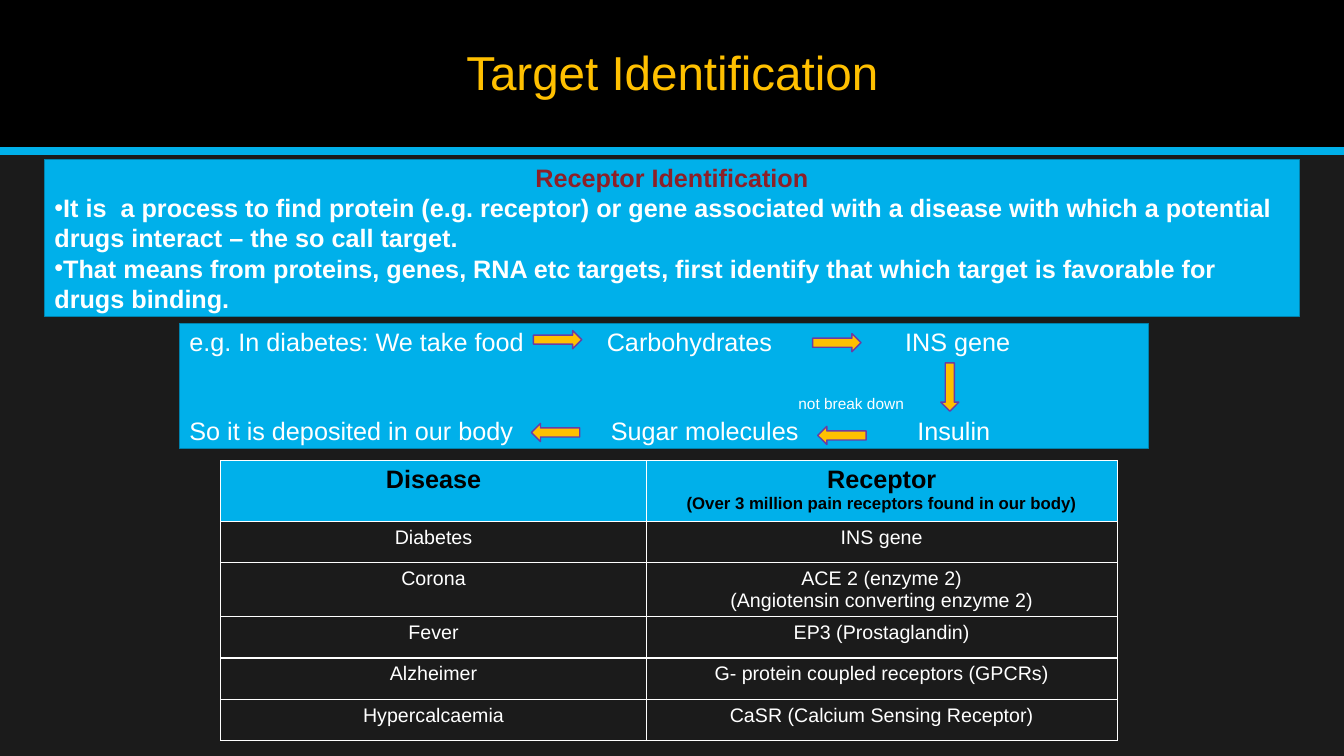
from lxml.etree import SubElement
from pptx import Presentation
from pptx.dml.color import RGBColor
from pptx.enum.shapes import MSO_CONNECTOR, MSO_SHAPE
from pptx.enum.text import MSO_ANCHOR, MSO_AUTO_SIZE, PP_ALIGN
from pptx.oxml.ns import qn
from pptx.util import Inches, Pt

BLACK = RGBColor(0x00, 0x00, 0x00)
WHITE = RGBColor(0xFF, 0xFF, 0xFF)
CHARCOAL = RGBColor(0x1B, 0x1B, 0x1B)
SKY = RGBColor(0x00, 0xB0, 0xEA)
DEEP_SKY = RGBColor(0x00, 0x82, 0xAD)
GOLD = RGBColor(0xFF, 0xC0, 0x00)
MAROON = RGBColor(0x8C, 0x20, 0x28)
PURPLE = RGBColor(0x6C, 0x3C, 0xA2)

PROCESS_POINTS = [
    "It is  a process to find protein (e.g. receptor) or gene associated with a disease "
    "with which a potential drugs interact – the so call target.",
    "That means from proteins, genes, RNA etc targets, first identify that which target "
    "is favorable for drugs binding.",
]
FLOW_LINES = [
    ("e.g. In diabetes: We take food\tCarbohydrates\tINS gene", 18, (4.14, 7.1), 0, 0),
    ("\tnot break down", 11, (6.04,), 27, 2),
    ("So it is deposited in our body\tSugar molecules\tInsulin", 18, (4.18, 7.22), 0, 0),
]
FLOW_ARROWS = [
    (3.51, 0.07, 0),
    (6.28, 0.1, 0),
    (3.49, 0.99, 180),
    (6.33, 1.02, 180),
    (7.4, 0.54, 90),
]
RECEPTORS = [
    ("Disease", "Receptor\n(Over 3 million pain receptors found in our body)"),
    ("Diabetes", "INS gene"),
    ("Corona", "ACE 2 (enzyme 2)\n(Angiotensin converting enzyme 2)"),
    ("Fever", "EP3 (Prostaglandin)"),
    ("Alzheimer", "G- protein coupled receptors (GPCRs)"),
    ("Hypercalcaemia", "CaSR (Calcium Sensing Receptor)"),
]


def place(part, left, top, width, height):
    part.left, part.top = Inches(left), Inches(top)
    part.width, part.height = Inches(width), Inches(height)


def style_runs(paragraph, size, color, bold=False):
    for run in paragraph.runs:
        run.font.name = "Arial"
        run.font.size = Pt(size)
        run.font.bold = bold
        run.font.color.rgb = color


def paint(part, fill, outline):
    part.fill.solid()
    part.fill.fore_color.rgb = fill
    part.line.color.rgb = outline
    part.line.width = Pt(1)


def add_panel(slide, preset, left, top, width, height, fill, outline):
    panel = slide.shapes.add_shape(
        preset, Inches(left), Inches(top), Inches(width), Inches(height))
    panel.shadow.inherit = False
    paint(panel, fill, outline)
    return panel


def set_bullet(paragraph, bullet=None):
    properties = paragraph._p.get_or_add_pPr()
    properties.set("marL", "0")
    properties.set("indent", "0")
    if bullet:
        SubElement(properties, qn("a:buChar"), char=bullet)
    else:
        SubElement(properties, qn("a:buNone"))


def set_tabs(paragraph, stops):
    tabs = SubElement(paragraph._p.get_or_add_pPr(), qn("a:tabLst"))
    for stop in stops:
        SubElement(tabs, qn("a:tab"), pos=str(Inches(stop)), algn="l")


def set_borders(cell, color):
    properties = cell._tc.get_or_add_tcPr()
    for position, side in enumerate(("a:lnL", "a:lnR", "a:lnT", "a:lnB")):
        border = properties.makeelement(qn(side), {"w": str(Pt(1))})
        SubElement(SubElement(border, qn("a:solidFill")), qn("a:srgbClr"), val=str(color))
        properties.insert(position, border)


def add_header(slide, left, top, width, height):
    add_panel(slide, MSO_SHAPE.RECTANGLE, left, top, width, height,
              BLACK, BLACK).line.fill.background()
    rule = slide.shapes.add_connector(
        MSO_CONNECTOR.STRAIGHT, Inches(left), Inches(top + height),
        Inches(left + width), Inches(top + height))
    rule.line.color.rgb = SKY
    rule.line.width = Pt(6)
    SubElement(rule._element.spPr, qn("a:effectLst"))

    title = slide.shapes.title
    slide.shapes._spTree.append(title._element)
    place(title, left + 1.17, top + 0.14, 11, height - 0.3)
    frame = title.text_frame
    frame.text = "Target Identification"
    frame.vertical_anchor = MSO_ANCHOR.MIDDLE
    frame.auto_size = MSO_AUTO_SIZE.NONE
    heading = frame.paragraphs[0]
    heading.alignment = PP_ALIGN.CENTER
    heading.line_spacing = 0.9
    style_runs(heading, 34, GOLD)


def fill_definition(slide, left, top, width, height):
    definition = slide.placeholders[1]
    place(definition, left, top, width, height)
    paint(definition, SKY, DEEP_SKY)
    frame = definition.text_frame
    frame.text = "\n".join(["Receptor Identification", *PROCESS_POINTS])
    frame.word_wrap = True
    frame.vertical_anchor = MSO_ANCHOR.MIDDLE
    frame.auto_size = MSO_AUTO_SIZE.NONE
    heading, *points = frame.paragraphs
    for paragraph in frame.paragraphs:
        paragraph.space_before = Pt(0)
    heading.alignment = PP_ALIGN.CENTER
    set_bullet(heading)
    style_runs(heading, 18, MAROON, bold=True)
    for point in points:
        point.alignment = PP_ALIGN.LEFT
        set_bullet(point, "•")
        style_runs(point, 18, WHITE, bold=True)


def add_flow(slide, left, top, width, height):
    flow = add_panel(slide, MSO_SHAPE.RECTANGLE, left, top, width, height, SKY, DEEP_SKY)
    frame = flow.text_frame
    frame.text = "\n".join(line[0] for line in FLOW_LINES)
    frame.vertical_anchor = MSO_ANCHOR.MIDDLE
    for paragraph, (_, size, stops, before, after) in zip(frame.paragraphs, FLOW_LINES):
        paragraph.alignment = PP_ALIGN.LEFT
        paragraph.space_before, paragraph.space_after = Pt(before), Pt(after)
        set_tabs(paragraph, stops)
        style_runs(paragraph, size, WHITE)
    for across, down, angle in FLOW_ARROWS:
        arrow = add_panel(slide, MSO_SHAPE.RIGHT_ARROW, left + across, top + down,
                          0.48, 0.18, GOLD, PURPLE)
        arrow.rotation = angle


def add_receptor_table(slide, left, top, width, height):
    table = slide.shapes.add_table(
        len(RECEPTORS), 2, Inches(left), Inches(top), Inches(width), Inches(height)).table
    table.horz_banding = False
    table.columns[0].width = Inches(4.22)
    table.columns[1].width = Inches(width - 4.22)
    for index, texts in enumerate(RECEPTORS):
        is_header = index == 0
        table.rows[index].height = Inches(0.6 if is_header else 0.41)
        for cell, text in zip(table.rows[index].cells, texts):
            cell.text_frame.text = text
            if is_header:
                cell.fill.solid()
                cell.fill.fore_color.rgb = SKY
            else:
                cell.fill.background()
            set_borders(cell, WHITE)
            for line, paragraph in enumerate(cell.text_frame.paragraphs):
                paragraph.alignment = PP_ALIGN.CENTER
                if is_header:
                    style_runs(paragraph, 12 if line else 18, BLACK, bold=True)
                else:
                    style_runs(paragraph, 14, WHITE)


def main():
    deck = Presentation()
    deck.slide_width, deck.slide_height = Inches(13.33), Inches(7.5)
    slide = deck.slides.add_slide(deck.slide_layouts[1])
    slide.background.fill.solid()
    slide.background.fill.fore_color.rgb = CHARCOAL
    add_header(slide, 0, 0, 13.33, 1.5)
    fill_definition(slide, 0.44, 1.58, 12.45, 1.56)
    add_flow(slide, 1.78, 3.21, 9.61, 1.24)
    add_receptor_table(slide, 2.19, 4.57, 8.89, 2.79)
    deck.save("out.pptx")


if __name__ == "__main__":
    main()
